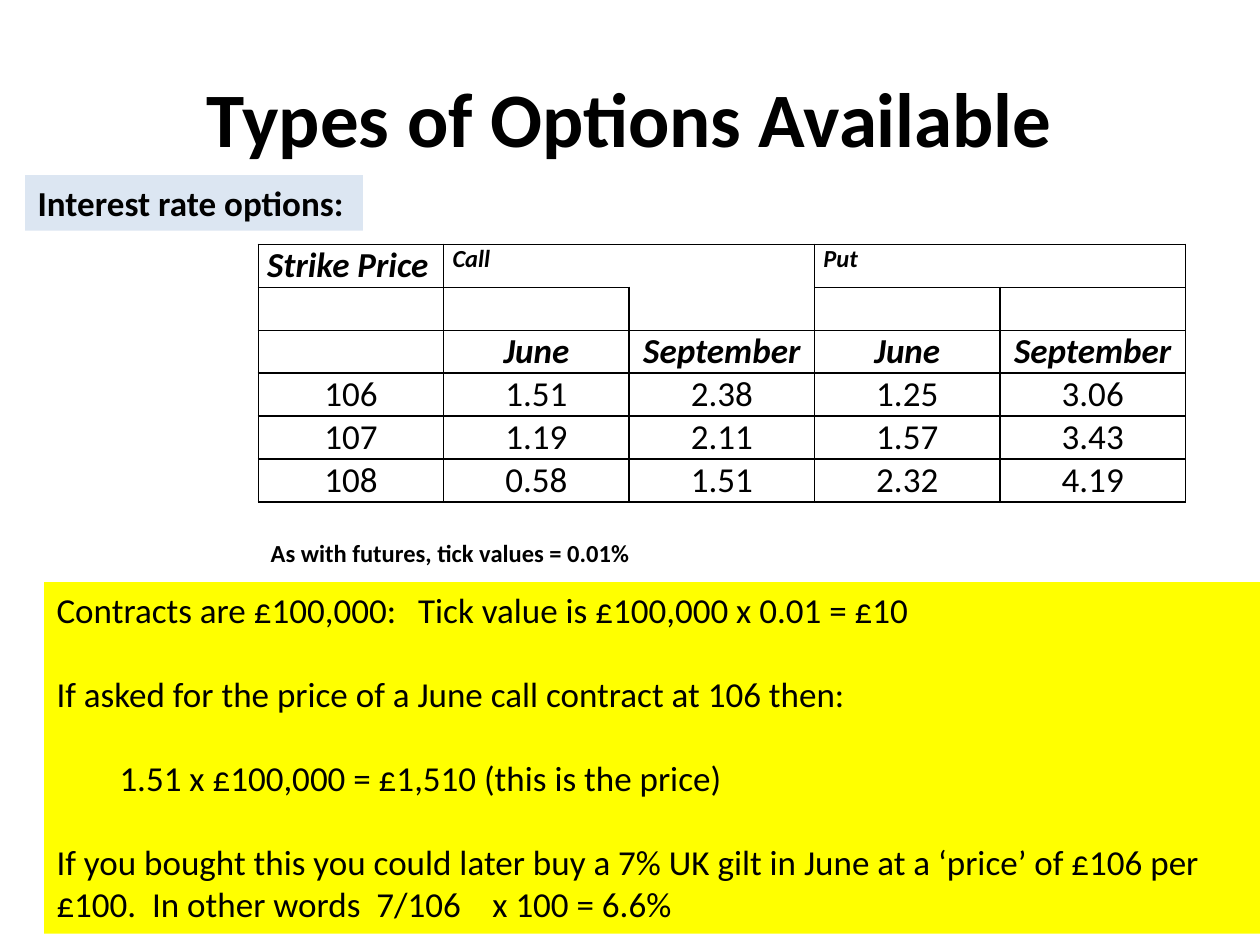
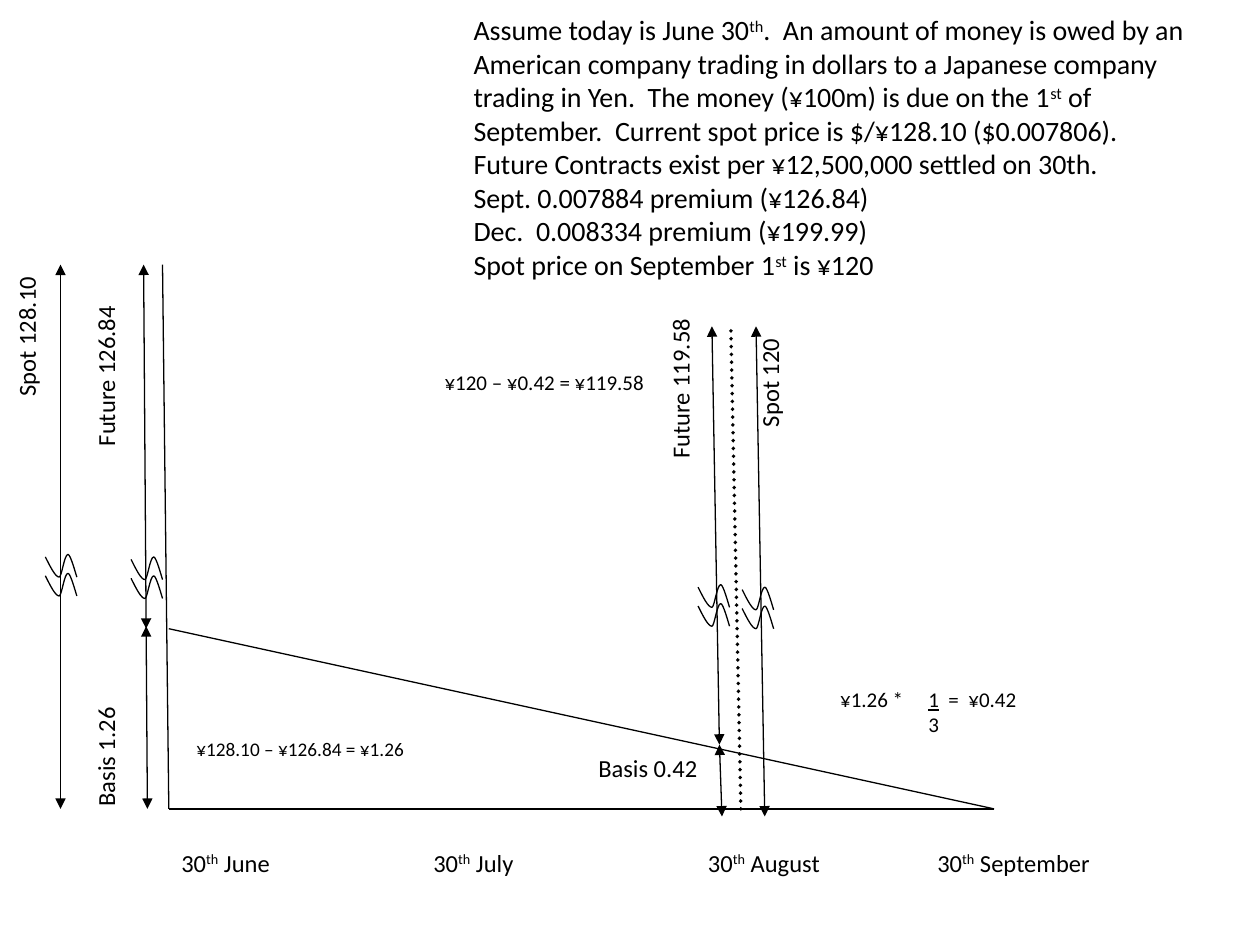
from lxml.etree import SubElement
from pptx import Presentation
from pptx.dml.color import RGBColor
from pptx.enum.dml import MSO_LINE
from pptx.enum.shapes import MSO_CONNECTOR, MSO_SHAPE
from pptx.enum.text import MSO_ANCHOR, PP_ALIGN as Align
from pptx.oxml.ns import qn
from pptx.util import Inches, Pt

FONT = "Calibri"
BLACK, WHITE, YELLOW, PALE_BLUE = "000000", "FFFFFF", "FFFF00", "DCE6F2"
NO_GRID_STYLE = "{2D5ABB26-0587-4C30-8999-92F81FD0307C}"
TITLE_ONLY, BLANK = 5, 6
SUPERSCRIPT, UNDERLINE = ("baseline", "30000"), ("u", "sng")

OPTION_ROWS = [
    ["Strike Price", "Call", "", "Put", ""],
    [""] * 5,
    ["", "June", "September", "June", "September"],
    ["106", "1.51", "2.38", "1.25", "3.06"],
    ["107", "1.19", "2.11", "1.57", "3.43"],
    ["108", "0.58", "1.51", "2.32", "4.19"],
]
OPEN_SIDES = {(0, 2): "B", (1, 2): "T"}
CONTRACT_NOTES = [
    "Contracts are £100,000:\tTick value is £100,000 x 0.01 = £10",
    "If asked for the price of a June call contract at 106 then:",
    "1.51 x £100,000 = £1,510 (this is the price)",
    "If you bought this you could later buy a 7% UK gilt in June at a ‘price’ of "
    "£106 per £100.  In other words  7/106\tx 100 = 6.6%",
]
SCENARIO = [
    "Assume today is June 30^th^.  An amount of money is owed by an American company "
    "trading in dollars to a Japanese company trading in Yen.  The money (¥100m) is due "
    "on the 1^st^ of September.  Current spot price is $/¥128.10 ($0.007806).",
    "Future Contracts exist per ¥12,500,000 settled on 30th.",
    "Sept. 0.007884 premium (¥126.84)",
    "Dec.  0.008334 premium (¥199.99)",
    "Spot price on September 1^st^ is ¥120",
]
DATES = "30^th^ June\t30^th^ July\t30^th^ August\t30^th^ September"
VERTICAL_LABELS = [
    ("Spot 120", 5.94, 2.59, 3.89, Align.RIGHT, ()),
    ("\tFuture 119.58", 5.23, 2.16, 3.58, Align.LEFT, (2,)),
    ("Spot 128.10", 0.04, 2.1, 4.32, Align.RIGHT, ()),
    ("\tBasis 1.26\tFuture 126.84", 0.67, 2.1, 4.58, Align.LEFT, (0.18, 3.04)),
]
AXES = [
    (1.29, 2.1, 1.34, 6.42),
    (1.34, 6.42, 7.89, 6.42),
    (1.34, 4.99, 7.89, 6.42),
]
PRICE_ARROWS = [
    (0.48, 2.1, 0.48, 6.42),
    (1.14, 2.1, 1.16, 4.99),
    (1.16, 4.97, 1.17, 6.42),
    (6, 2.59, 6.07, 6.48),
    (5.65, 2.59, 5.71, 5.91),
    (5.71, 5.91, 5.73, 6.48),
]
AXIS_BREAKS = [(0.36, 4.4), (1.04, 4.42), (5.89, 4.66), (5.54, 4.64)]
BREAK_GAP = 0.15
WAVE_START = (0, 0.02)
WAVE_CURVES = [
    ((0.04, 0.1), (0.08, 0.18), (0.11, 0.18)),
    ((0.13, 0.18), (0.15, 0), (0.18, 0)),
    ((0.2, 0), (0.24, 0.15), (0.25, 0.18)),
]


def color(value):
    """Turn a hex string into a colour."""
    return RGBColor.from_string(value)


def style(paragraph, size, bold=False, italic=False, align=Align.LEFT):
    """Format a whole paragraph."""
    font = paragraph.font
    font.name, font.size, font.bold, font.italic = FONT, Pt(size), bold, italic
    font.color.rgb = color(BLACK)
    paragraph.alignment = align


def write(paragraph, text, mark):
    """Add runs, marking the parts between carets."""
    for index, part in enumerate(text.split("^")):
        if part:
            span = paragraph.add_run()
            span.text = part
            if index % 2:
                span._r.get_or_add_rPr().set(*mark)


def set_tabs(paragraph, stops):
    """Give a paragraph left tab stops in inches."""
    properties = paragraph._p.get_or_add_pPr()
    tabs = SubElement(properties, qn("a:tabLst"))
    for stop in stops:
        SubElement(tabs, qn("a:tab"), pos=str(Inches(stop)), algn="l")
    properties.find(qn("a:defRPr")).addprevious(tabs)


def add_box(page, place, fill):
    """Add a filled rectangle, or a text box when there is no fill."""
    place = map(Inches, place)
    if not fill:
        return page.shapes.add_textbox(*place)
    box = page.shapes.add_shape(MSO_SHAPE.RECTANGLE, *place)
    box.shadow.inherit = False
    box.fill.solid()
    box.fill.fore_color.rgb = color(fill)
    box.line.fill.background()
    return box


def add_text(page, place, lines, size, fill=None, bold=False, align=Align.LEFT,
             tabs=(), mark=SUPERSCRIPT):
    """Add wrapped text, one paragraph for each line."""
    box = add_box(page, place, fill)
    frame = box.text_frame
    frame.word_wrap = True
    frame.vertical_anchor = MSO_ANCHOR.TOP
    for index, line in enumerate(lines):
        paragraph = frame.add_paragraph() if index else frame.paragraphs[0]
        write(paragraph, line, mark)
        style(paragraph, size, bold, align=align)
        if "\t" in line:
            set_tabs(paragraph, tabs)
    return box


def add_vertical_label(page, text, left, top, height, align, tabs):
    """Add a label that reads upwards."""
    place = (left, top, 0.52, height)
    box = add_text(page, place, [text], 14, WHITE, align=align, tabs=tabs)
    box.text_frame._txBody.bodyPr.set("vert", "vert270")


def add_line(page, ends, width=0.75, arrows=False, dotted=False):
    """Add a straight line, with arrowheads or round dots if asked."""
    line = page.shapes.add_connector(MSO_CONNECTOR.STRAIGHT, *map(Inches, ends))
    line.line.color.rgb = color(BLACK)
    line.line.width = Pt(width)
    properties = line._element.spPr
    stroke = properties.find(qn("a:ln"))
    if dotted:
        line.line.dash_style = MSO_LINE.ROUND_DOT
        stroke.set("cap", "rnd")
    if arrows:
        for end in ("a:headEnd", "a:tailEnd"):
            SubElement(stroke, qn(end), type="triangle")
    SubElement(properties, qn("a:effectLst"))


def add_wave(page, left, top):
    """Draw one wave of an axis break with cubic curves."""
    start, *knots = [
        (Inches(left + x), Inches(top + y))
        for x, y in (WAVE_START, *(curve[-1] for curve in WAVE_CURVES))
    ]
    builder = page.shapes.build_freeform(*start)
    builder.add_line_segments(knots, close=False)
    wave = builder.convert_to_shape()
    segments = list(wave._element.spPr.iter(qn("a:lnTo")))
    for segment, curve in zip(segments, WAVE_CURVES):
        bend = SubElement(segment.getparent(), qn("a:cubicBezTo"))
        for x, y in curve:
            SubElement(bend, qn("a:pt"), x=str(Inches(x)), y=str(Inches(y)))
        segment.getparent().replace(segment, bend)
    wave.shadow.inherit = False
    wave.fill.background()
    wave.line.color.rgb = color(BLACK)
    wave.line.width = Pt(0.75)


def set_borders(cell, open_sides):
    """Draw thin black lines around a cell except on its open sides."""
    properties = cell._tc.get_or_add_tcPr()
    for side in "LRTB":
        line = SubElement(properties, qn(f"a:ln{side}"), w=str(Pt(1)))
        if side in open_sides:
            SubElement(line, qn("a:noFill"))
        else:
            fill = SubElement(line, qn("a:solidFill"))
            SubElement(fill, qn("a:srgbClr"), val=BLACK)


def add_option_table(page):
    """Add the table of option premiums."""
    rows, columns = len(OPTION_ROWS), len(OPTION_ROWS[0])
    place = map(Inches, (2.05, 1.94, 7.36, 1.98))
    table = page.shapes.add_table(rows, columns, *place).table
    table.first_row = table.horz_banding = False
    table._tbl.tblPr.find(qn("a:tableStyleId")).text = NO_GRID_STYLE
    for r, row in enumerate(OPTION_ROWS):
        for c, text in enumerate(row):
            cell = table.cell(r, c)
            cell.margin_left = cell.margin_right = Inches(0.07)
            cell.margin_top = cell.margin_bottom = 0
            cell.text = text
            heading = r < 3
            size = 14 if text in ("Call", "Put") else 20
            align = Align.CENTER if r > 1 else Align.LEFT
            style(cell.text_frame.paragraphs[0], size, heading, heading, align)
            set_borders(cell, OPEN_SIDES.get((r, c), ""))
            cell.fill.background()
    for c in (1, 3):
        table.cell(0, c).merge(table.cell(0, c + 1))


def add_title(page, text):
    """Place and format the slide title."""
    title = page.shapes.title
    title.left, title.top, title.width, title.height = map(Inches, (0.5, 0.3, 9, 1.25))
    title.text_frame.vertical_anchor = MSO_ANCHOR.MIDDLE
    title.text_frame.text = text
    style(title.text_frame.paragraphs[0], 44, bold=True, align=Align.CENTER)


def build_options_slide(deck):
    """Build the slide on interest rate options."""
    page = deck.slides.add_slide(deck.slide_layouts[TITLE_ONLY])
    add_title(page, "Types of Options Available")
    add_text(page, (0.2, 1.39, 2.68, 0.44), ["Interest rate options:"], 20, PALE_BLUE, True)
    add_option_table(page)
    tick_note = ["As with futures, tick values = 0.01%"]
    add_text(page, (2.05, 4.22, 3.5, 0.59), tick_note, 14, bold=True)
    place = (0.35, 4.62, 9.65, 2.79)
    notes = add_text(page, place, CONTRACT_NOTES, 20, YELLOW, tabs=(2.87, 3.46))
    paragraphs = notes.text_frame.paragraphs
    for paragraph in paragraphs[1:]:
        paragraph.space_before = Pt(24)
    paragraphs[2]._p.get_or_add_pPr().set("marL", str(Inches(0.5)))


def build_basis_slide(deck):
    """Build the diagram of spot, future and basis."""
    page = deck.slides.add_slide(deck.slide_layouts[BLANK])
    add_text(page, (4.65, 5.93, 1.11, 0.47), ["Basis 0.42"], 14, WHITE)
    for label in VERTICAL_LABELS[:2]:
        add_vertical_label(page, *label)
    for ends in AXES:
        add_line(page, ends)
    add_line(page, (5.88, 6.42, 5.8, 2.59), 2.25, dotted=True)
    add_text(page, (1.34, 6.68, 7.95, 0.77), [DATES], 14, WHITE, tabs=(2, 4.18, 6))
    for label in VERTICAL_LABELS[2:]:
        add_vertical_label(page, *label)
    for ends in PRICE_ARROWS:
        add_line(page, ends, arrows=True)
    for left, top in AXIS_BREAKS:
        for offset in (0, BREAK_GAP):
            add_wave(page, left, top + offset)
    add_text(page, (3.66, 0.05, 5.98, 2.56), SCENARIO, 16)
    add_text(page, (1.46, 5.8, 2.2, 0.44), ["¥128.10 – ¥126.84 = ¥1.26"], 11)
    third = ["¥1.26 *\t^1^  =  ¥0.42", "\t3"]
    add_text(page, (6.57, 5.4, 2.13, 0.69), third, 12, tabs=(0.7,), mark=UNDERLINE)
    add_text(page, (3.43, 2.88, 1.81, 0.3), ["¥120 – ¥0.42 = ¥119.58"], 12)


def main():
    """Build and save the deck."""
    deck = Presentation()
    deck.slide_width, deck.slide_height = Inches(10), Inches(7.5)
    build_options_slide(deck)
    build_basis_slide(deck)
    deck.save("out.pptx")


if __name__ == "__main__":
    main()
